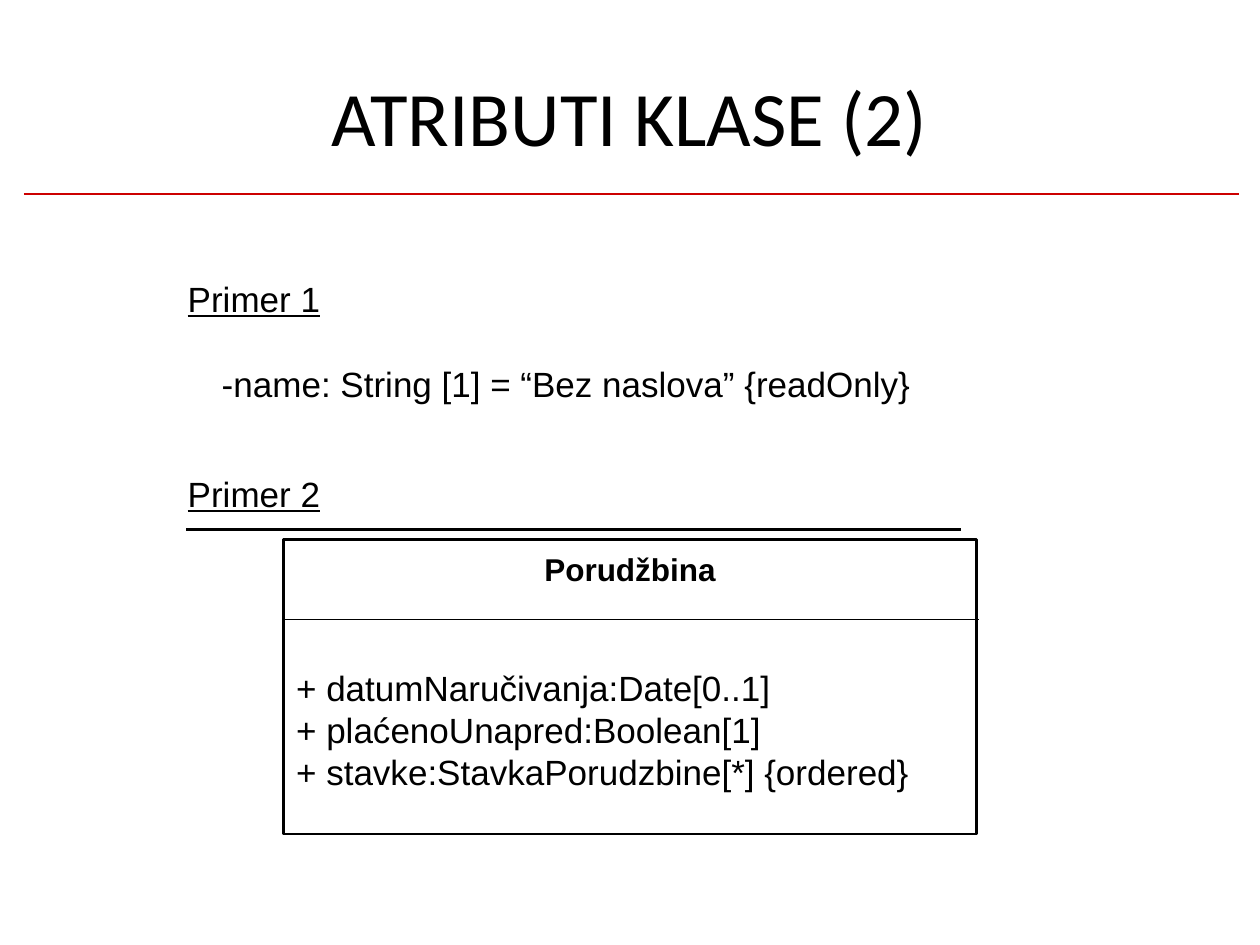
from dataclasses import dataclass

from lxml.etree import SubElement
from pptx import Presentation
from pptx.dml.color import RGBColor
from pptx.enum.shapes import MSO_CONNECTOR, MSO_SHAPE
from pptx.enum.text import MSO_ANCHOR, PP_ALIGN
from pptx.oxml.ns import qn
from pptx.util import Inches, Pt


@dataclass(frozen=True)
class Theme:
    ink: RGBColor = RGBColor(0x00, 0x00, 0x00)
    accent: RGBColor = RGBColor(0xCC, 0x00, 0x00)
    title_font: str = "Calibri"
    body_font: str = "Arial"
    title_size: int = 44
    body_size: int = 20
    name_size: int = 18
    leading: int = 24
    heavy: float = 1.56
    medium: float = 0.96
    thin: float = 0.72


@dataclass(frozen=True)
class Line:
    text: str
    indent: float = 0
    gap: float = 0
    underline: bool = False
    bold: bool = False


class Composer:
    columns, rows = 100, 75

    def __init__(self, deck, theme):
        self.theme = theme
        self.column = deck.slide_width / self.columns
        self.row = deck.slide_height / self.rows
        self.page = deck.slides.add_slide(deck.slide_layouts[6])

    def across(self, count):
        return round(count * self.column)

    def down(self, count):
        return round(count * self.row)

    def frame(self, left, top, width, height):
        return self.across(left), self.down(top), self.across(width), self.down(height)

    def text_frame(self, *place):
        frame = self.page.shapes.add_textbox(*self.frame(*place)).text_frame
        frame.word_wrap = True
        frame.margin_left = frame.margin_right = 0
        frame.margin_top = frame.margin_bottom = 0
        return frame

    def style(self, para, font, size):
        para.font.name = font
        para.font.size = Pt(size)
        para.font.color.rgb = self.theme.ink

    def title(self, text, *place):
        frame = self.text_frame(*place)
        frame.vertical_anchor = MSO_ANCHOR.MIDDLE
        para = frame.paragraphs[0]
        para.text = text
        para.alignment = PP_ALIGN.CENTER
        self.style(para, self.theme.title_font, self.theme.title_size)

    def body(self, lines, *place):
        frame = self.text_frame(*place)
        for number, line in enumerate(lines):
            para = frame.add_paragraph() if number else frame.paragraphs[0]
            para.text = line.text
            para.line_spacing = Pt(self.theme.leading)
            para.space_before = Pt(line.gap)
            size = self.theme.name_size if line.bold else self.theme.body_size
            self.style(para, self.theme.body_font, size)
            para.font.underline = line.underline
            para.font.bold = line.bold
            para._p.get_or_add_pPr().set("marL", str(self.across(line.indent)))

    def rule(self, left, top, width, color, weight):
        begin, level = self.across(left), self.down(top)
        rule = self.page.shapes.add_connector(
            MSO_CONNECTOR.STRAIGHT, begin, level, begin + self.across(width), level
        )
        rule.line.color.rgb = color
        rule.line.width = Pt(weight)
        SubElement(rule._element.spPr, qn("a:effectLst"))

    def outline(self, *place):
        box = self.page.shapes.add_shape(MSO_SHAPE.RECTANGLE, *self.frame(*place))
        box.shadow.inherit = False
        box.fill.background()
        box.line.color.rgb = self.theme.ink
        box.line.width = Pt(self.theme.heavy)


def main():
    deck = Presentation()
    deck.slide_width, deck.slide_height = Inches(10), Inches(7.5)
    theme = Theme()
    composer = Composer(deck, theme)

    composer.title("ATRIBUTI KLASE (2)", 5, 5.5, 90, 7.4)
    composer.rule(1.9, 15.4, 96.4, theme.accent, theme.medium)

    composer.outline(22.5, 42.8, 55, 23.4)
    composer.rule(14.8, 42, 61.5, theme.ink, theme.heavy)
    composer.rule(22.5, 49.2, 55.2, theme.ink, theme.thin)

    attribute = 8.7
    composer.body(
        [
            Line("Primer 1", 0.1, underline=True),
            Line("-name: String [1] = “Bez naslova” {readOnly}", 2.8, gap=25),
            Line("Primer 2", 0.1, gap=38.3, underline=True),
            Line("Porudžbina", 28.4, gap=18, bold=True),
            Line("+ datumNaručivanja:Date[0..1]", attribute, gap=45),
            Line("+ plaćenoUnapred:Boolean[1]", attribute),
            Line("+ stavke:StavkaPorudzbine[*] {ordered}", attribute),
        ],
        14.8, 22, 57.5, 41.2,
    )
    deck.save("out.pptx")


if __name__ == "__main__":
    main()
